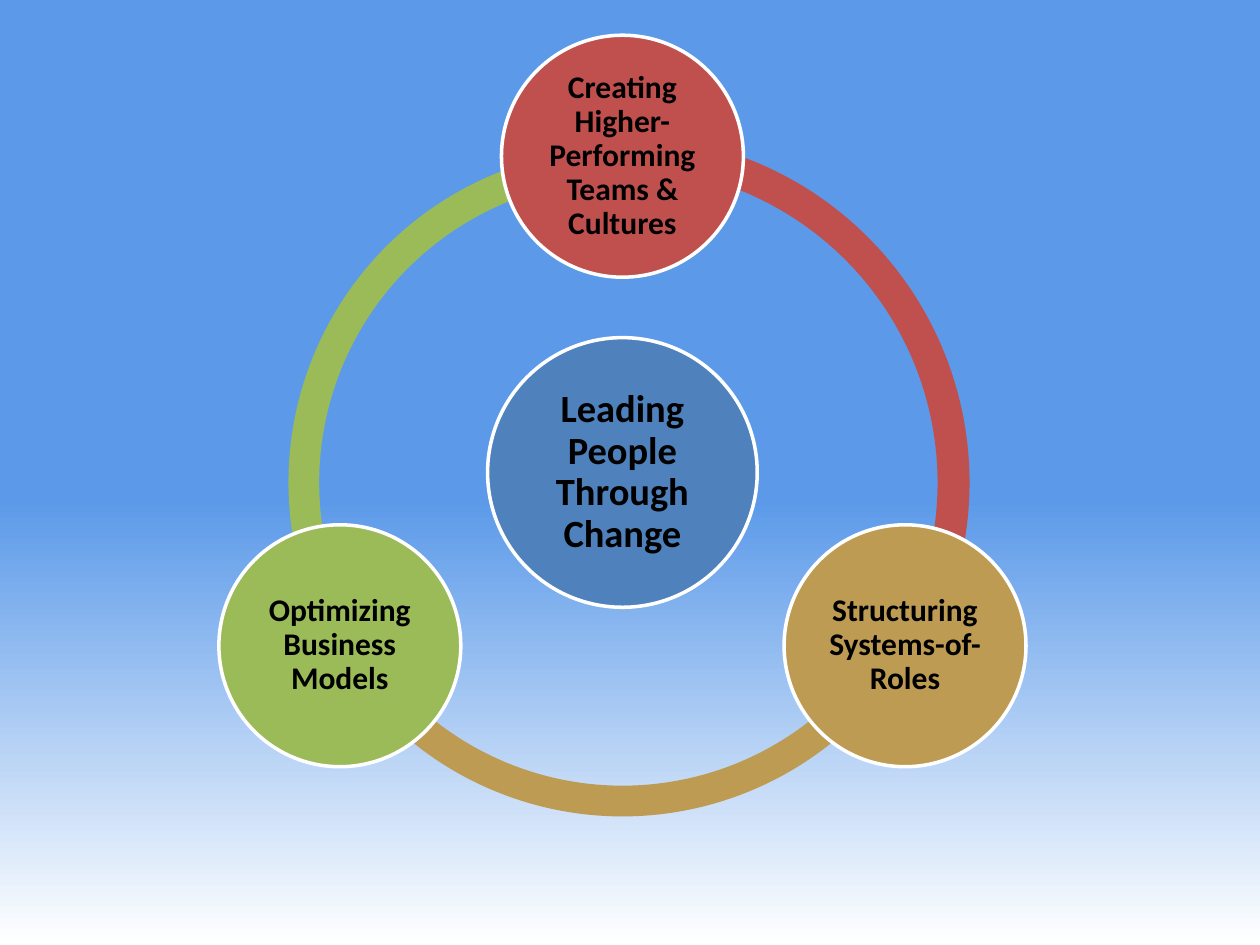
from math import cos, radians, sin

from pptx import Presentation
from pptx.dml.color import RGBColor
from pptx.enum.shapes import MSO_SHAPE as Shape
from pptx.enum.text import MSO_ANCHOR as Anchor, PP_ALIGN as Align
from pptx.util import Inches, Pt

# Content: text, colour, angle of the node, size of the arc that follows it
NODES = [
    ("Creating Higher-Performing Teams & Cultures", "C0504D", 270, 5.51),
    ("Structuring Systems-of-Roles", "BD9B53", 30, 5.3),
    ("Optimizing Business Models", "9BBB59", 150, 5.3),
]
HUB = ("Leading People Through Change", "4F81BD")
SKY = [(0.53, "5C9AE9"), (1, "FFFFFF")]

# Geometry in inches
MID_X, MID_Y, RADIUS = 4.94, 3.83, 2.59
HUB_Y, HUB_SIZE, NODE_SIZE = 3.75, 2.14, 1.92
BAND = 0.046


def rgb(code):
    return RGBColor.from_string(code)


def place(kind, x, y, size, color):
    """Add a square shape centred on x, y."""
    shape = slide.shapes.add_shape(
        kind, Inches(x - size / 2), Inches(y - size / 2), Inches(size), Inches(size))
    shape.shadow.inherit = False
    shape.fill.solid()
    shape.fill.fore_color.rgb = rgb(color)
    shape.line.fill.background()
    return shape


def add_arc(start, end, size, color):
    arc = place(Shape.BLOCK_ARC, MID_X, MID_Y, size, color)
    # Angles are stored in 60000ths of a degree, scaled by 100000
    for i, value in enumerate((start * 0.6, end * 0.6, BAND)):
        arc.adjustments[i] = value


def add_disc(text, x, y, size, color, points):
    disc = place(Shape.OVAL, x, y, size, color)
    disc.line.color.rgb = rgb("FFFFFF")
    disc.line.width = Pt(2)
    frame = disc.text_frame
    frame.word_wrap = True
    frame.vertical_anchor = Anchor.MIDDLE
    frame.margin_left = frame.margin_right = Inches(0.03)
    frame.margin_top = frame.margin_bottom = Inches(0.03)
    para = frame.paragraphs[0]
    para.alignment = Align.CENTER
    para.line_spacing = 0.9
    run = para.add_run()
    run.text = text
    font = run.font
    font.name, font.size, font.bold = "Calibri", Pt(points), True
    font.color.rgb = rgb("000000")


deck = Presentation()
deck.slide_width, deck.slide_height = Inches(10), Inches(7.5)
slide = deck.slides.add_slide(deck.slide_layouts[6])

# Background, running from top to bottom
fill = slide.background.fill
fill.gradient()
fill.gradient_angle = 270
for stop, (pos, color) in zip(fill.gradient_stops, SKY):
    stop.position = pos
    stop.color.rgb = rgb(color)

# Ring: each arc runs clockwise to the next node
for text, color, angle, size in reversed(NODES):
    add_arc(angle, (angle + 120) % 360, size, color)

# Hub and nodes
add_disc(HUB[0], MID_X, HUB_Y, HUB_SIZE, HUB[1], 22)
for text, color, angle, size in NODES:
    turn = radians(angle)
    add_disc(text, MID_X + RADIUS * cos(turn), MID_Y + RADIUS * sin(turn),
             NODE_SIZE, color, 18)

deck.save("out.pptx")
